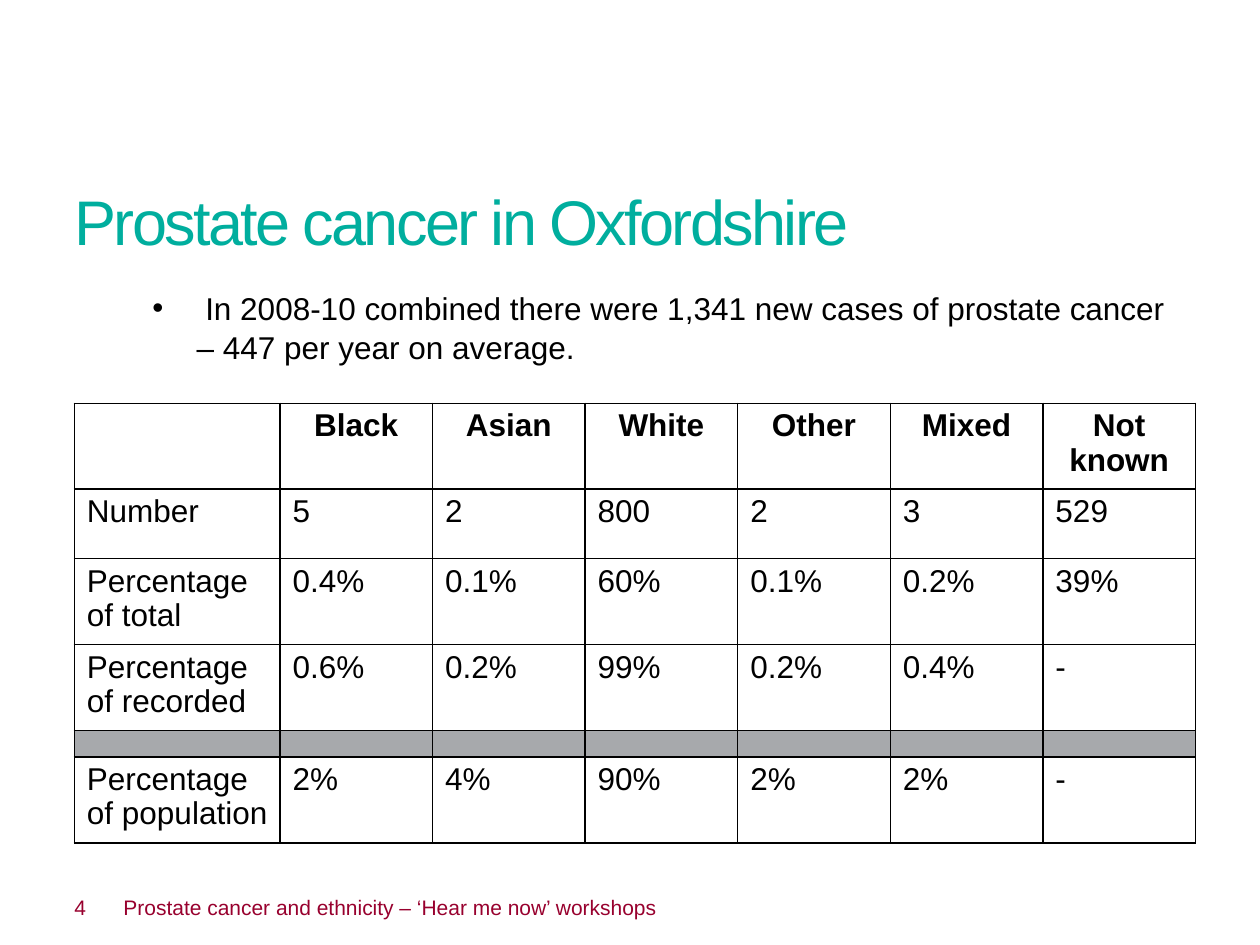
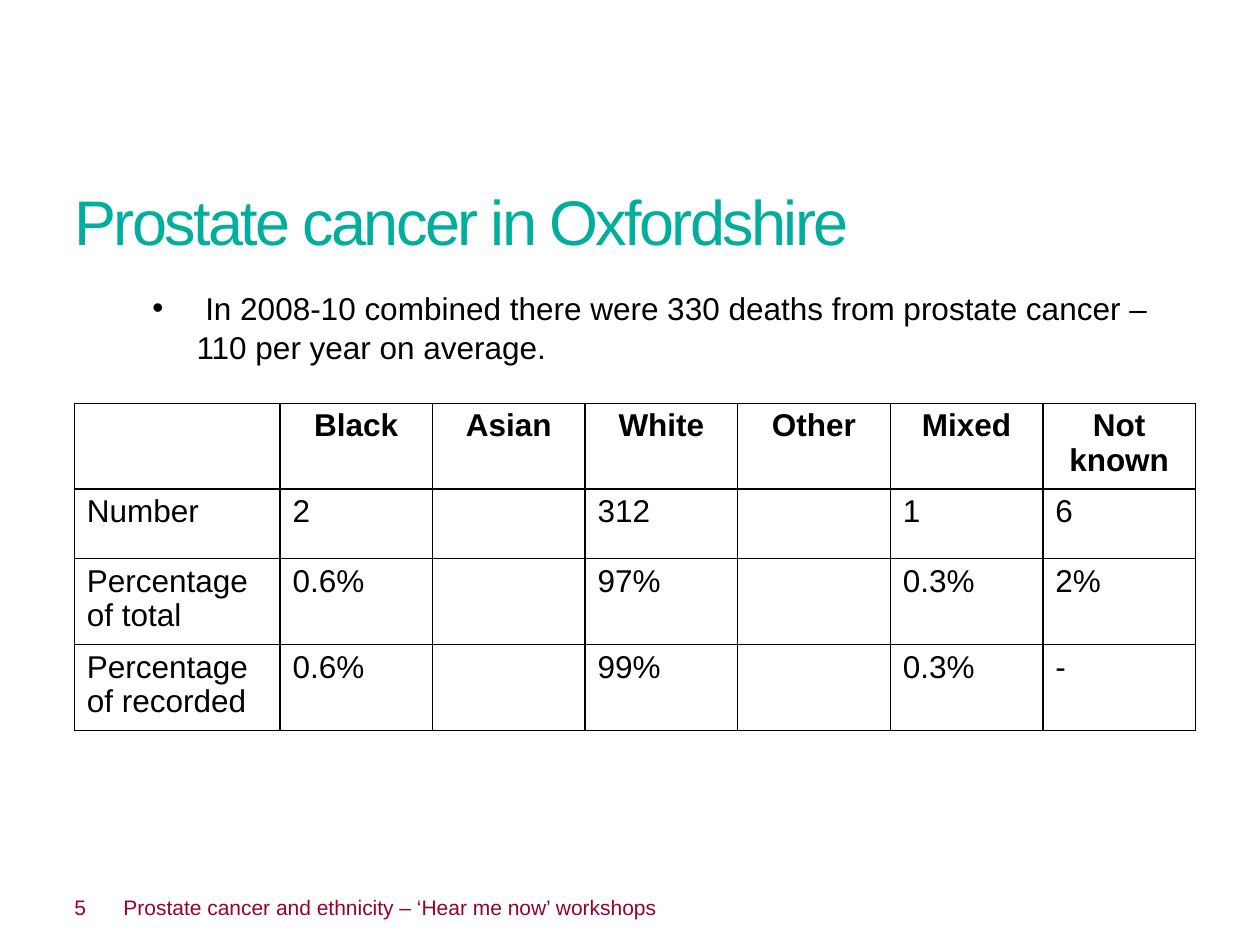
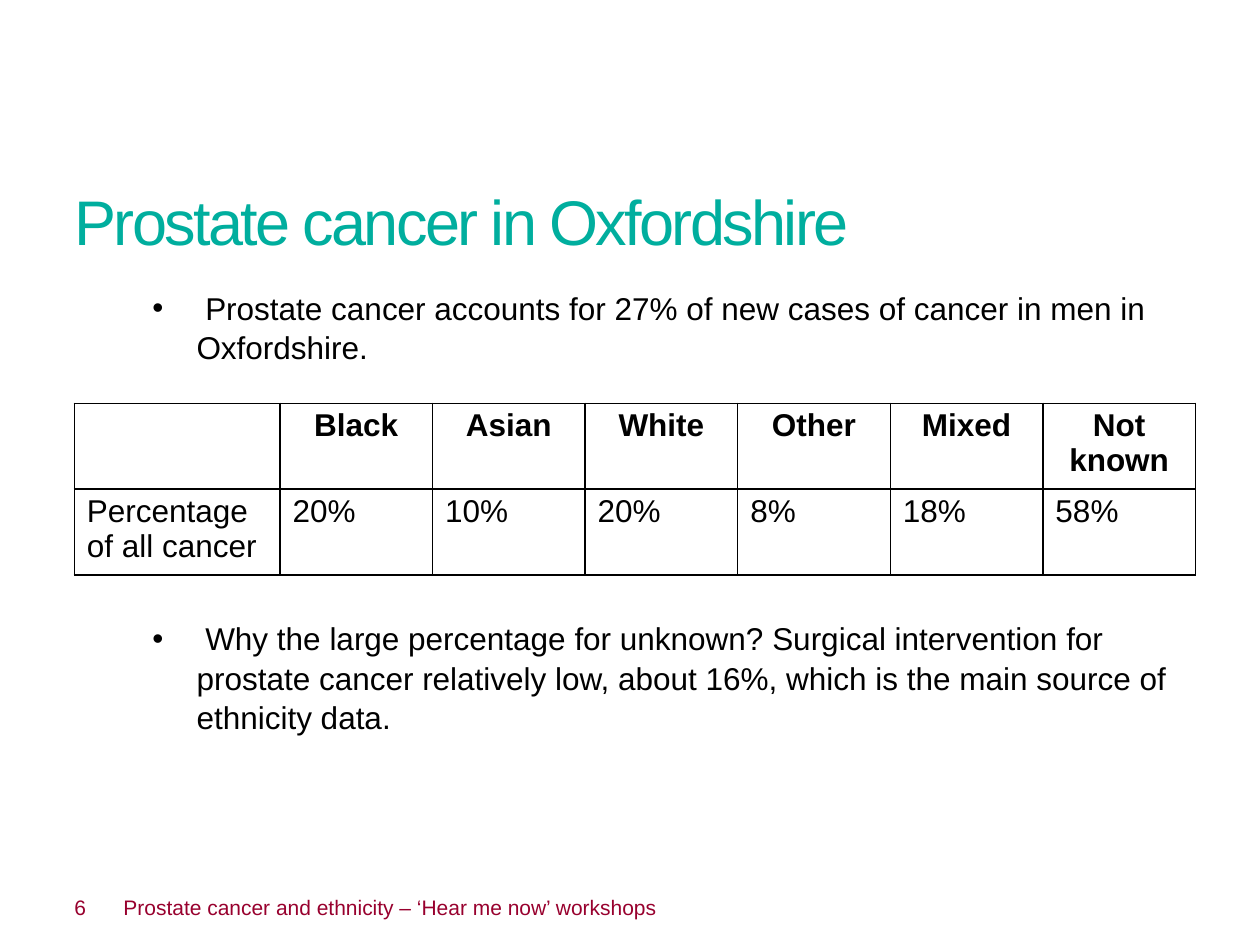
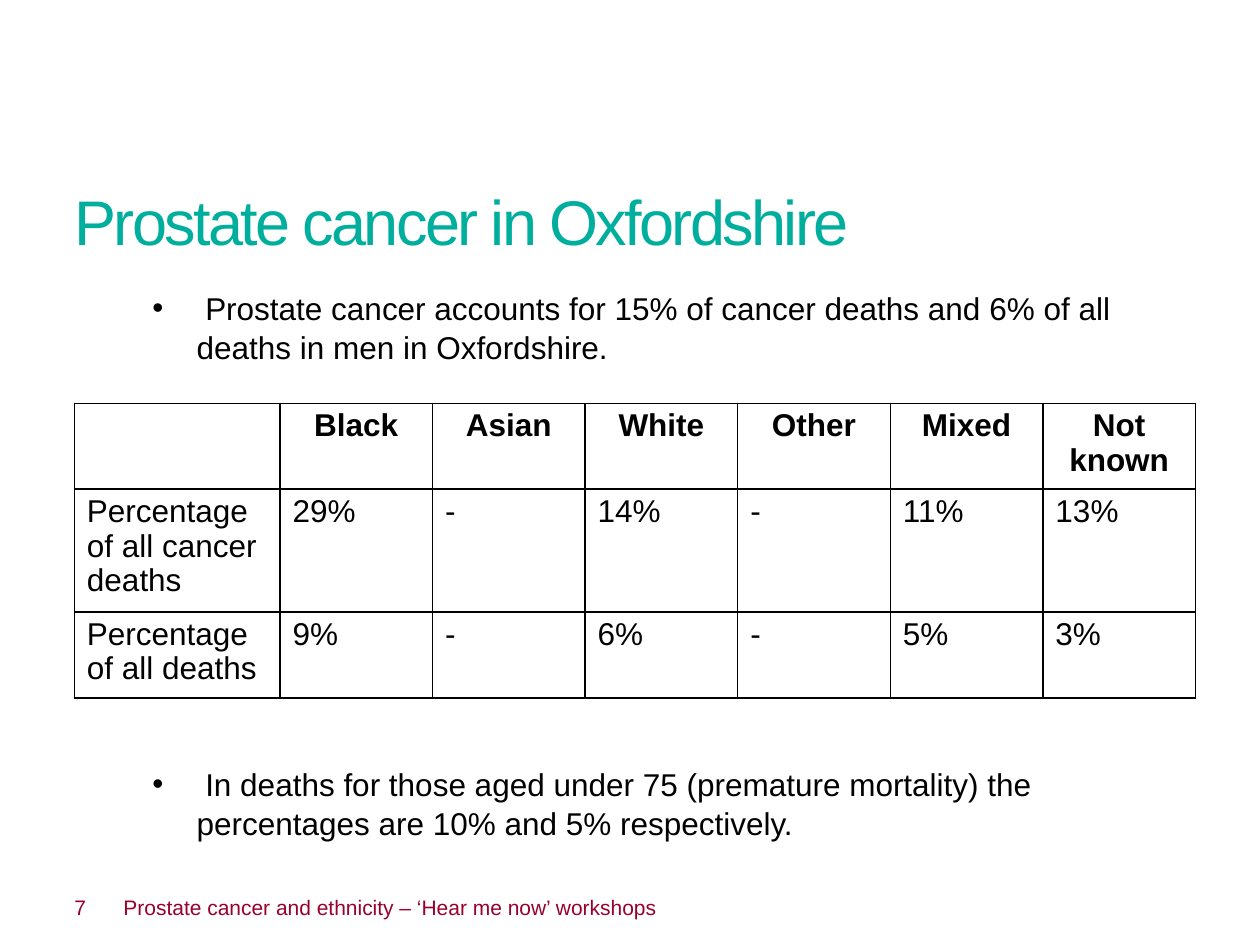
from lxml.etree import SubElement
from pptx import Presentation
from pptx.dml.color import RGBColor
from pptx.enum.shapes import MSO_SHAPE
from pptx.enum.text import MSO_ANCHOR, PP_ALIGN
from pptx.oxml.ns import qn
from pptx.util import Emu, Inches, Pt

WIDTH, HEIGHT = Inches(10), Inches(7.5)
FONT = "Arial"
TEAL, PLUM, BLACK, WHITE, GREY = "00AE9E", "98002E", "000000", "FFFFFF", "A7A9AC"

# Boxes are left, top, width, height in percent of the slide.
TITLE = (5.9, 18.5, 87.8, 9.5)
BODY = (6.1, 30.4, 87.8, 10.1)
TABLE = (5.9, 42.67, 89, 0)
STRIP = (0, 92, 100, 8)
NOTE = (9.8, 92, 84.3, 8)

# Row heights in percent of the slide height.
THIN, ONE, TWO, THREE = 2.8, 7.33, 8.8, 12.53
COLS = [1.63] + [1.21] * 6
HEAD = ["", "Black", "Asian", "White", "Other", "Mixed", "Not known"]

TOPIC = "Prostate cancer in Oxfordshire"
FOOTER = "Prostate cancer and ethnicity – ‘Hear me now’ workshops"

# Each page: bullets as (space before, text), then table rows as (height, cells).
PAGES = [
    ([(0, " In 2008-10 combined there were 1,341 new cases of prostate cancer – 447 per year on average.")],
     [(ONE, ["Number", "5", "2", "800", "2", "3", "529"]),
      (TWO, ["Percentage of total", "0.4%", "0.1%", "60%", "0.1%", "0.2%", "39%"]),
      (TWO, ["Percentage of recorded", "0.6%", "0.2%", "99%", "0.2%", "0.4%", "-"]),
      (THIN, [""] * 7),
      (TWO, ["Percentage of population", "2%", "4%", "90%", "2%", "2%", "-"])]),
    ([(0, " In 2008-10 combined there were 330 deaths from prostate cancer – 110 per year on average.")],
     [(ONE, ["Number", "2", "", "312", "", "1", "6"]),
      (TWO, ["Percentage of total", "0.6%", "", "97%", "", "0.3%", "2%"]),
      (TWO, ["Percentage of recorded", "0.6%", "", "99%", "", "0.3%", "-"])]),
    ([(0, " Prostate cancer accounts for 27% of new cases of cancer in men in Oxfordshire."),
      (144, " Why the large percentage for unknown? Surgical intervention for prostate cancer "
            "relatively low, about 16%, which is the main source of ethnicity data.")],
     [(TWO, ["Percentage of all cancer", "20%", "10%", "20%", "8%", "18%", "58%"])]),
    ([(0, " Prostate cancer accounts for 15% of cancer deaths and 6% of all deaths in men in Oxfordshire."),
      (227, " In deaths for those aged under 75 (premature mortality) the percentages are 10% and 5% respectively.")],
     [(THREE, ["Percentage of all cancer deaths", "29%", "-", "14%", "-", "11%", "13%"]),
      (TWO, ["Percentage of all deaths", "9%", "-", "6%", "-", "5%", "3%"])]),
]


def color(code):
    return RGBColor.from_string(code)


def place(box):
    """Turn a box in percent into slide lengths."""
    sides = (WIDTH, HEIGHT, WIDTH, HEIGHT)
    return [Emu(int(side * part / 100)) for side, part in zip(sides, box)]


def paint(shape, code):
    shape.fill.solid()
    shape.fill.fore_color.rgb = color(code)


def write(para, text, size, code, bold=False):
    run = para.add_run()
    run.text = text
    font = run.font
    font.name, font.size, font.bold = FONT, Pt(size), bold
    font.color.rgb = color(code)
    return run


def setup(frame, anchor=MSO_ANCHOR.TOP):
    """Clear the insets of a text frame and give its first paragraph."""
    frame.word_wrap = True
    frame.vertical_anchor = anchor
    frame.margin_left = frame.margin_right = frame.margin_top = frame.margin_bottom = 0
    return frame.paragraphs[0]


def title(slide, box):
    para = setup(slide.shapes.add_textbox(*place(box)).text_frame)
    para.line_spacing = 1.1
    run = write(para, TOPIC, 36, TEAL)
    run.font._element.set("spc", "-150")


def body(slide, box, points):
    frame = slide.shapes.add_textbox(*place(box)).text_frame
    para = setup(frame)
    for i, (gap, text) in enumerate(points):
        if i:
            para = frame.add_paragraph()
        props = para._p.get_or_add_pPr()
        props.set("marL", str(Inches(0.95)))
        props.set("indent", str(-Inches(0.35)))
        SubElement(props, qn("a:buFont"), typeface=FONT)
        SubElement(props, qn("a:buChar"), char="•")
        para.line_spacing = 1.04
        if gap:
            para.space_before = Pt(gap)
        write(para, text, 18, BLACK)


def footer(slide, number):
    strip = slide.shapes.add_shape(MSO_SHAPE.RECTANGLE, *place(STRIP))
    strip.shadow.inherit = False
    paint(strip, WHITE)
    strip.line.fill.background()
    para = setup(strip.text_frame, MSO_ANCHOR.MIDDLE)
    strip.text_frame.margin_right = Inches(0.1)
    para.alignment = PP_ALIGN.LEFT
    para._p.get_or_add_pPr().set("marL", str(place(TITLE)[0]))
    write(para, str(number), 12, PLUM)

    note = slide.shapes.add_textbox(*place(NOTE))
    write(setup(note.text_frame, MSO_ANCHOR.MIDDLE), FOOTER, 12, PLUM)


def border(cell):
    props = cell._tc.get_or_add_tcPr()
    for i, side in enumerate(("lnL", "lnR", "lnT", "lnB")):
        line = props.makeelement(qn("a:" + side), {"w": str(Pt(1))})
        fill = SubElement(line, qn("a:solidFill"))
        SubElement(fill, qn("a:srgbClr"), val=BLACK)
        props.insert(i, line)


def fill(cell, text, head, thin):
    paint(cell, GREY if thin else WHITE)
    border(cell)
    para = cell.text_frame.paragraphs[0]
    para.line_spacing = 0.97
    if head:
        para.alignment = PP_ALIGN.CENTER
    if text:
        write(para, text, 18, BLACK, head)
    else:
        SubElement(para._p, qn("a:endParaRPr"), sz="600" if thin else "1800")


def table(slide, box, rows):
    rows = [(TWO, HEAD)] + rows
    left, top, width, _ = box
    tall = sum(height for height, _ in rows)
    grid = slide.shapes.add_table(len(rows), len(COLS), *place((left, top, width, tall))).table
    grid.first_row = grid.horz_banding = False
    for col, share in zip(grid.columns, COLS):
        col.width = int(WIDTH * width / 100 * share / sum(COLS))
    for r, (height, texts) in enumerate(rows):
        grid.rows[r].height = int(HEIGHT * height / 100)
        for c, text in enumerate(texts):
            fill(grid.cell(r, c), text, r == 0, height == THIN)


def main():
    deck = Presentation()
    deck.slide_width, deck.slide_height = WIDTH, HEIGHT
    for number, (points, rows) in enumerate(PAGES, 4):
        slide = deck.slides.add_slide(deck.slide_layouts[6])
        title(slide, TITLE)
        body(slide, BODY, points)
        footer(slide, number)
        table(slide, TABLE, rows)
    deck.save("out.pptx")


if __name__ == "__main__":
    main()
